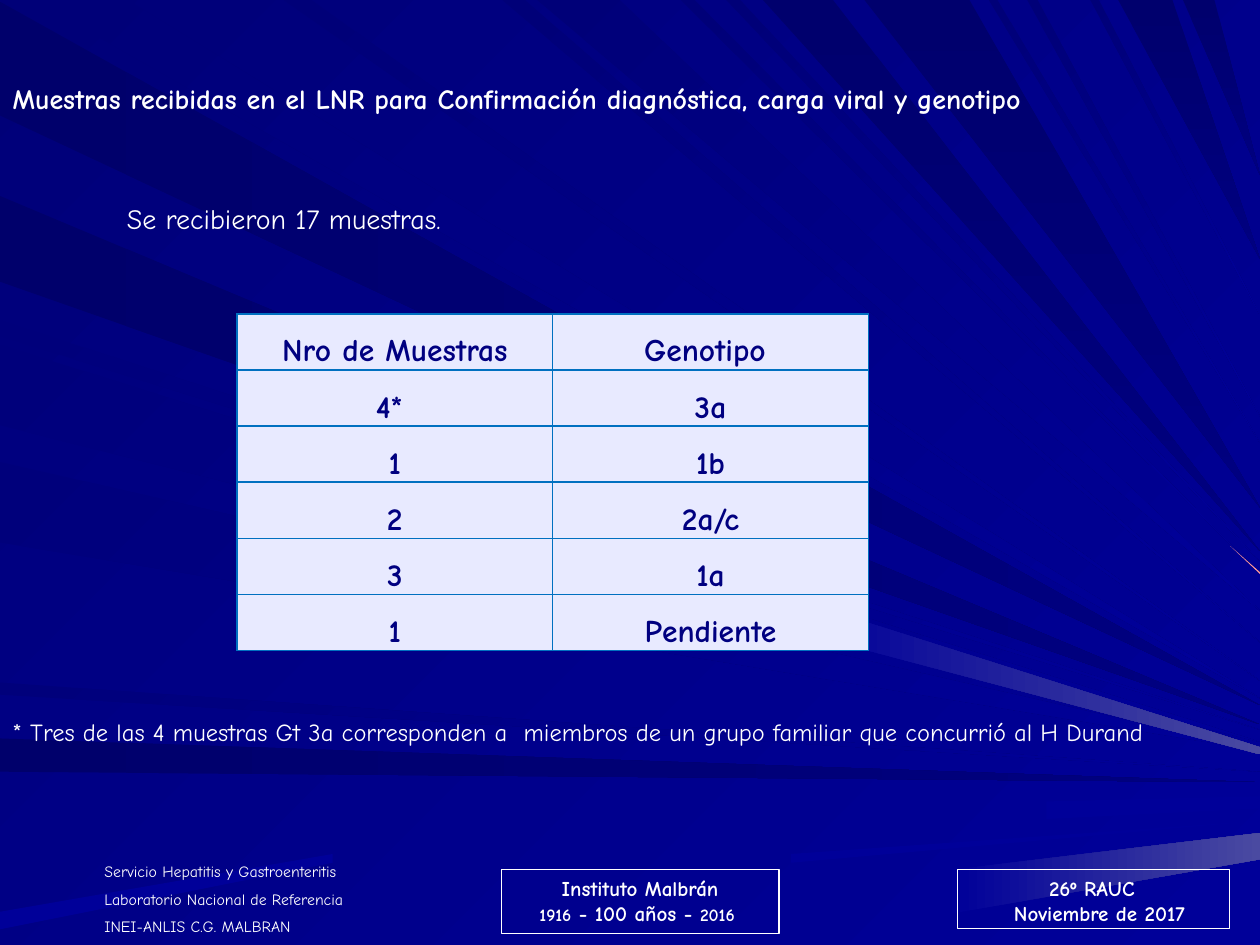
from lxml import etree
from pptx import Presentation
from pptx.dml.color import RGBColor
from pptx.enum.shapes import MSO_SHAPE
from pptx.enum.text import MSO_ANCHOR, MSO_AUTO_SIZE, PP_ALIGN
from pptx.oxml.ns import qn
from pptx.util import Pt

RECT = MSO_SHAPE.RECTANGLE
TOP, BOTTOM = MSO_ANCHOR.TOP, MSO_ANCHOR.BOTTOM
LEFT, CENTER = PP_ALIGN.LEFT, PP_ALIGN.CENTER
NO_FIT = MSO_AUTO_SIZE.NONE

THEME = {
    "font": "Comic Neue",
    "text": "FFFFFF",
    "cell": "E8EAFF",
    "cell_text": "000080",
    "border": "0070C0",
    "bg": ("000078", "000099", 45),
    "deep_side": ("00006B", "000080", 0),
    "soft_side": ("00007B", "000099", 45),
    "deep_top": ("00006D", "000080", 90),
    "soft_top": ("000078", "000099", 45),
    "glow": ("000099", "4A4AA1", 0),
    "plain": ("000099", "000099", 0),
    "spark": ("FF9999", "FF9999", 0),
    "title": 16, "body": 16, "note": 14, "table": 18,
    "footer": 9, "badge": 12, "badge_small": 10,
}
W, H = 720, 540


def paint(fill, start, end, angle):
    if start == end:
        fill.solid()
        fill.fore_color.rgb = RGBColor.from_string(start)
        return
    fill.gradient()
    fill.gradient_angle = (360 - angle) % 360
    for stop, color in zip(fill.gradient_stops, (start, end)):
        stop.color.rgb = RGBColor.from_string(color)


def write(tf, lines, align=LEFT, bold=False, color="text", gap=0, anchor=TOP):
    tf.word_wrap = True
    tf.vertical_anchor = anchor
    for i, runs in enumerate(lines):
        p = tf.paragraphs[0] if i == 0 else tf.add_paragraph()
        p.alignment = align
        p.space_before = Pt(gap if i else 0)
        for text, size in runs:
            r = p.add_run()
            r.text = text
            r.font.name = THEME["font"]
            r.font.size = Pt(THEME[size])
            r.font.bold = bold
            r.font.color.rgb = RGBColor.from_string(THEME[color])


prs = Presentation()
prs.slide_width, prs.slide_height = Pt(W), Pt(H)
s = prs.slides.add_slide(prs.slide_layouts[5])
paint(s.background.fill, *THEME["bg"])

side_rays = [
    ("deep_side", [(1, 66, 403), (422, 441, 447), (112, 161, 414)]),
    ("soft_side", [(183, 192, 417), (197, 243, 424), (264, 310, 429), (390, 397, 441)]),
]
top_rays = [
    ("soft_top", [(19, 73, 399), (287, 300, 367), (307, 354, 349), (389, 397, 328),
                  (162, 178, 389), (415, 423, 321), (565, 570, 253), (587, 593, 238),
                  (623, 628, 180)]),
    ("deep_top", [(436, 476, 315), (494, 554, 290), (639, 670, 148), (676, 694, 100)]),
]
wedges = [
    ("glow", 459, W, (344, 362), (427, 431)),
    ("plain", 598, W, (458, 468), (455, 462)),
    ("plain", 452, W, (488, 493), (469, 469)),
    ("glow", 544, W, (497, 522), (476, 491)),
    ("plain", 0, 190, (521, 531), (488, 493)),
    ("spark", 703, W, (312, 312), (327, 328)),
]
rays = [(style, [(0, a), (0, b), (W, tip)])
        for style, group in side_rays for a, b, tip in group]
rays += [(style, [(a, 0), (b, 0), (W, tip)])
         for style, group in top_rays for a, b, tip in group]
rays += [(style, [(x, a), (x, b), (end, d), (end, c)])
         for style, x, end, (a, b), (c, d) in wedges]
for style, corners in rays:
    builder = s.shapes.build_freeform(*corners[0], scale=Pt(1))
    builder.add_line_segments(corners[1:], close=True)
    sp = builder.convert_to_shape()
    sp.shadow.inherit = False
    sp.line.fill.background()
    paint(sp.fill, *THEME[style])

frames = []
for x, w, h, weight in [(547.2, 155.5, 33.8, 0.75), (286.6, 158.4, 36.7, 1)]:
    sp = s.shapes.add_shape(RECT, Pt(x), Pt(496.8), Pt(w), Pt(h))
    sp.shadow.inherit = False
    sp.fill.background()
    sp.line.color.rgb = RGBColor.from_string(THEME["text"])
    sp.line.width = Pt(weight)
    frames.append(sp)
write(frames[1].text_frame, [
    [("Instituto Malbrán", "badge")],
    [("1916", "badge_small"), (" - 100 años - ", "badge"), ("2016 ", "badge_small")],
], CENTER, True)

title = s.shapes.title
s.shapes.element.append(title.element)
title.left, title.top, title.width, title.height = Pt(0), Pt(43.2), Pt(700), Pt(26.6)
title.text_frame.auto_size = NO_FIT
write(title.text_frame, [[(
    "Muestras recibidas en el LNR para Confirmación diagnóstica, carga viral y genotipo", "title")]],
    bold=True)

for x, y, w, h, lines, style in [
    (52.6, 488.9, 182.2, 51.1, [
        [("Servicio Hepatitis y Gastroenteritis", "footer")],
        [("Laboratorio Nacional de Referencia", "footer")],
        [("INEI-ANLIS C.G. MALBRAN", "footer")]], {"gap": 5}),
    (549.4, 496.8, 153.4, 36, [
        [("26º RAUC ", "badge")],
        [(" Noviembre de 2017", "badge")]], {"align": CENTER, "bold": True}),
    (65.5, 111.6, 374.4, 28.8, [[("Se recibieron 17 muestras.", "body")]], {}),
    (0, 406.1, W, 24.5, [[(
        "* Tres de las 4 muestras Gt 3a corresponden a  miembros de un grupo familiar "
        "que concurrió al H Durand", "note")]], {}),
]:
    sp = s.shapes.add_textbox(Pt(x), Pt(y), Pt(w), Pt(h))
    write(sp.text_frame, lines, **style)

rows = [("Nro de Muestras", "Genotipo "), ("4* ", "3a"), ("1", "1b"),
        ("2", "2a/c"), ("3", "1a"), ("1", "Pendiente")]
table = s.shapes.add_table(len(rows), 2, Pt(135.4), Pt(179.3), Pt(360.8), Pt(192.6)).table
for i, row in enumerate(rows):
    table.rows[i].height = Pt(32.1)
    for j, text in enumerate(row):
        cell = table.cell(i, j)
        cell.margin_left = cell.margin_right = cell.margin_top = Pt(0.72)
        cell.margin_bottom = Pt(0)
        cell.vertical_anchor = BOTTOM
        write(cell.text_frame, [[(text, "table")]], CENTER, True, "cell_text", anchor=BOTTOM)
        tcPr = cell._tc.get_or_add_tcPr()
        for side in ("a:lnL", "a:lnR", "a:lnT", "a:lnB"):
            ln = etree.SubElement(tcPr, qn(side), w=str(Pt(1)))
            fill = etree.SubElement(ln, qn("a:solidFill"))
            etree.SubElement(fill, qn("a:srgbClr"), val=THEME["border"])
        cell.fill.solid()
        cell.fill.fore_color.rgb = RGBColor.from_string(THEME["cell"])

prs.save("out.pptx")
